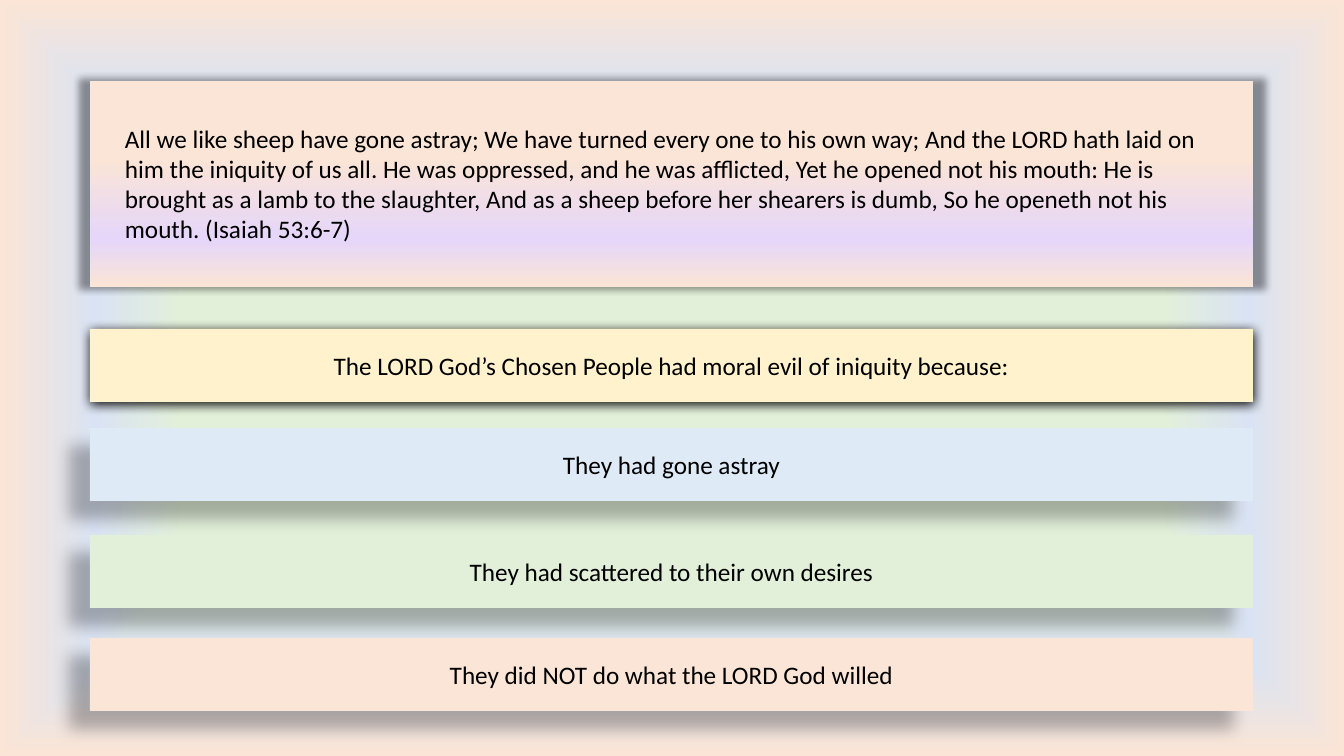
from pptx import Presentation
from pptx.dml.color import RGBColor
from pptx.enum.shapes import MSO_SHAPE
from pptx.enum.text import MSO_ANCHOR, MSO_AUTO_SIZE as AUTO_SIZE, PP_ALIGN
from pptx.oxml import parse_xml
from pptx.oxml.ns import nsdecls, qn
from pptx.util import Pt

EMU_PER_PX = 12192000 / 1344
LEFT, WIDTH, BAR_HEIGHT = 90, 1163, 73
PEACH, GREEN, LAVENDER = "FBE5D6", "E2F0D9", "E5D6FA"
YELLOW, BLUE, PERIWINKLE = "FFF2CC", "DEEBF7", "DAE3F3"

PASSAGE = (
    "All we like sheep have gone astray; We have turned every one to his own way; "
    "And the LORD hath laid on him the iniquity of us all. He was oppressed, and he "
    "was afflicted, Yet he opened not his mouth: He is brought as a lamb to the "
    "slaughter, And as a sheep before her shearers is dumb, So he openeth not his "
    "mouth. (Isaiah 53:6-7)"
)
PASSAGE_SHADOW = {"alpha": 40, "blur": 5, "dist": 0, "angle": 0, "scale": 102}
HEADING_SHADOW = {"alpha": 100, "blur": 8.5, "dist": 1, "angle": 90}
REASON_SHADOW = {"alpha": 28, "blur": 11.8, "dist": 19.7, "angle": 141}
BARS = [
    (329, YELLOW, HEADING_SHADOW, "The LORD God’s Chosen People had moral evil of iniquity because:"),
    (428, BLUE, REASON_SHADOW, "They had gone astray"),
    (535, GREEN, REASON_SHADOW, "They had scattered to their own desires"),
    (638, PEACH, REASON_SHADOW, "They did NOT do what the LORD God willed"),
]
FONT = {"name": "Calibri", "size": Pt(18)}
PASSAGE_FRAME = {"word_wrap": True, "auto_size": AUTO_SIZE.SHAPE_TO_FIT_TEXT}
BAR_FRAME = {"word_wrap": True, "vertical_anchor": MSO_ANCHOR.MIDDLE}


def px(*lengths):
    return [round(length * EMU_PER_PX) for length in lengths]


def color(hex_code):
    return RGBColor.from_string(hex_code)


def apply(target, values):
    for name, value in values.items():
        setattr(target, name, value)


def gradient(stops, direction):
    """Return a gradient fill element from (percent, colour) stops."""
    stop_list = "".join(
        f'<a:gs pos="{percent * 1000}"><a:srgbClr val="{hex_code}"/></a:gs>'
        for percent, hex_code in stops
    )
    return parse_xml(
        f'<a:gradFill {nsdecls("a")} rotWithShape="1">'
        f"<a:gsLst>{stop_list}</a:gsLst>{direction}</a:gradFill>"
    )


def paint_background(slide):
    center = '<a:fillToRect l="50000" t="50000" r="50000" b="50000"/>'
    background = parse_xml(
        f'<p:bg {nsdecls("p", "a")}><p:bgPr><a:effectLst/></p:bgPr></p:bg>'
    )
    background[0].insert(0, gradient(
        [(51, GREEN), (75, PERIWINKLE), (100, PEACH)],
        f'<a:path path="rect">{center}</a:path>',
    ))
    slide.element.cSld.insert(0, background)


def cast_shadow(panel, alpha, blur, dist, angle, scale=100):
    panel.shadow.inherit = False
    effects = panel.element.spPr.find(qn("a:effectLst"))
    align = "ctr" if scale != 100 else "t"
    effects.append(parse_xml(
        f'<a:outerShdw {nsdecls("a")} blurRad="{Pt(blur)}" dist="{Pt(dist)}" '
        f'dir="{angle * 60000}" sx="{scale * 1000}" sy="{scale * 1000}" '
        f'algn="{align}" rotWithShape="0"><a:srgbClr val="000000">'
        f'<a:alpha val="{alpha * 1000}"/></a:srgbClr></a:outerShdw>'
    ))


def add_panel(slide, top, height, shadow):
    panel = slide.shapes.add_shape(
        MSO_SHAPE.RECTANGLE, *px(LEFT, top, WIDTH, height)
    )
    panel.line.fill.background()
    cast_shadow(panel, **shadow)
    return panel


def write(holder, text, frame_format, align):
    frame = holder.text_frame
    apply(frame, frame_format)
    paragraph = frame.paragraphs[0]
    paragraph.alignment = align
    run = paragraph.add_run()
    run.text = text
    apply(run.font, FONT)
    run.font.color.rgb = color("000000")


def add_passage(slide):
    panel = add_panel(slide, 81, 206, PASSAGE_SHADOW)
    panel.fill.background()
    properties = panel.element.spPr
    properties.replace(properties.find(qn("a:noFill")), gradient(
        [(37, PEACH), (77, LAVENDER), (100, PEACH)],
        '<a:lin ang="5400000" scaled="0"/>',
    ))
    verse = slide.shapes.add_textbox(*px(115, 118, 1113, 132))
    write(verse, PASSAGE, PASSAGE_FRAME, PP_ALIGN.LEFT)


def add_bar(slide, top, fill, shadow, text):
    bar = add_panel(slide, top, BAR_HEIGHT, shadow)
    bar.fill.solid()
    bar.fill.fore_color.rgb = color(fill)
    write(bar, text, BAR_FRAME, PP_ALIGN.CENTER)


def main():
    deck = Presentation()
    deck.slide_width, deck.slide_height = px(1344, 756)
    slide = deck.slides.add_slide(deck.slide_layouts[6])
    paint_background(slide)
    add_passage(slide)
    for bar in BARS:
        add_bar(slide, *bar)
    deck.save("out.pptx")


if __name__ == "__main__":
    main()
